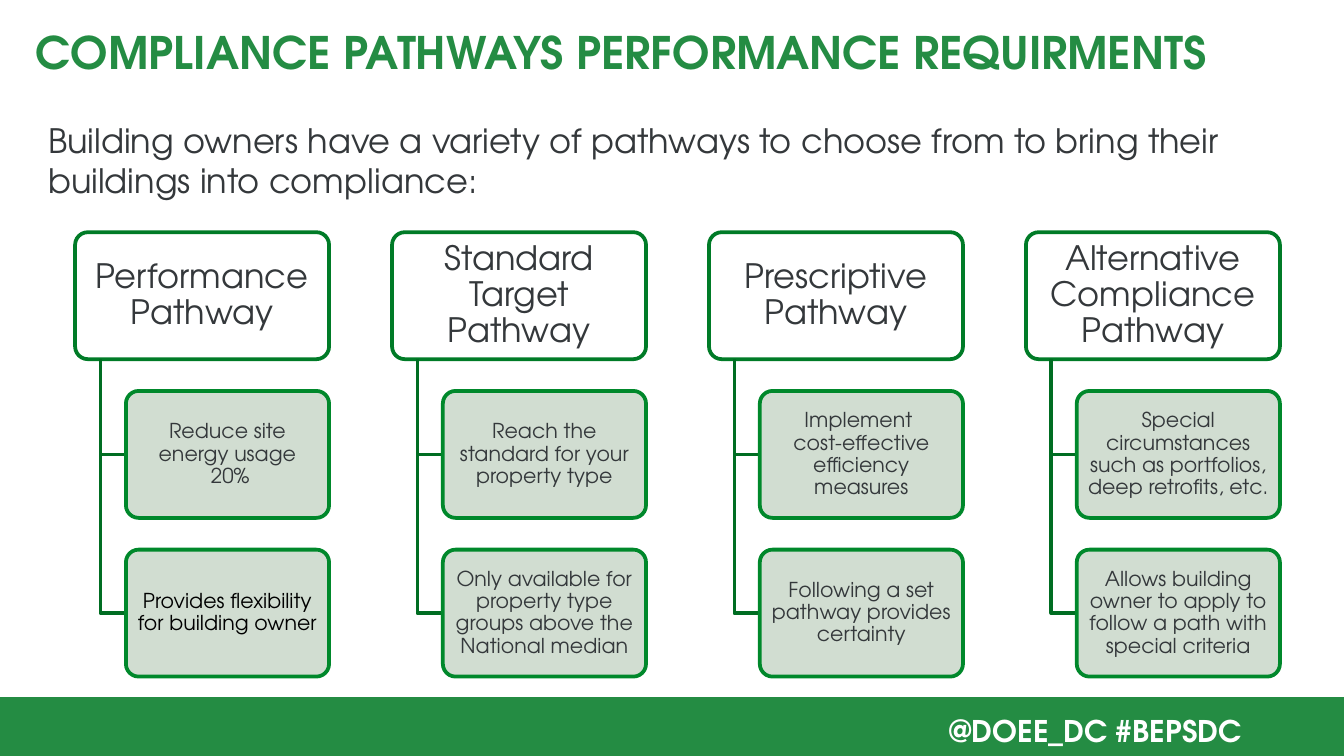
from pptx import Presentation
from pptx import util as u
from pptx.dml.color import RGBColor
from pptx.enum import shapes, text
from pptx.oxml.ns import qn
from lxml import etree

Cm = u.Cm
INK, GREEN, WHITE = "34383B", "248C43", "FFFFFF"
LEFT, TOP = 1.42, 4.39
COL, ROW = 5.99, 3
WIDE, HIGH = 4.8, 2.4
STEM, INDENT = 0.48, 0.96

PATHS = [
    ("Performance Pathway",
     ["Reduce site energy usage\n 20%",
      "Provides flexibility for building owner"]),
    ("Standard Target Pathway",
     ["Reach the standard for your property type",
      "Only available for property type groups above the National median"]),
    ("Prescriptive Pathway",
     ["Implement \ncost-effective efficiency measures",
      "Following a set pathway provides certainty"]),
    ("Alternative Compliance Pathway",
     ["Special circumstances such as portfolios, deep retrofits, etc.",
      "Allows building owner to apply to follow a path with special criteria"]),
]


def color(code):
    return RGBColor.from_string(code)


class Deck:
    font = "TeX Gyre Adventor"

    def __init__(self):
        self.show = Presentation()
        self.show.slide_width, self.show.slide_height = Cm(25.4), Cm(14.29)
        self.slide = self.show.slides.add_slide(self.show.slide_layouts[6])

    def put(self, shape, words, size, ink, bold=False, align="LEFT",
            anchor="TOP", inset=(0.25, 0.13), space=None):
        """Fill a shape with one paragraph; a newline becomes a line break."""
        frame = shape.text_frame
        frame.word_wrap = True
        frame.vertical_anchor = text.MSO_ANCHOR[anchor]
        frame.margin_left = frame.margin_right = Cm(inset[0])
        frame.margin_top = frame.margin_bottom = Cm(inset[1])
        para = frame.paragraphs[0]
        para.alignment = text.PP_ALIGN[align]
        if space:
            para.line_spacing = space
        for i, line in enumerate(words.split("\n")):
            if i:
                para.add_line_break()
            run = para.add_run()
            run.text = line
            run.font.name, run.font.size = self.font, u.Pt(size)
            run.font.bold = bold
            run.font.color.rgb = color(ink)

    def label(self, x, y, w, h, words, size, ink, **style):
        box = self.slide.shapes.add_textbox(Cm(x), Cm(y), Cm(w), Cm(h))
        self.put(box, words, size, ink, **style)

    def block(self, kind, x, y, w, h, fill, line=None, alpha=None):
        shape = self.slide.shapes.add_shape(kind, Cm(x), Cm(y), Cm(w), Cm(h))
        shape.shadow.inherit = False
        shape.fill.solid()
        shape.fill.fore_color.rgb = color(fill)
        if alpha:
            tint = shape.element.spPr.find(qn("a:solidFill"))[0]
            etree.SubElement(tint, qn("a:alpha"), val=str(alpha * 1000))
        if line:
            shape.line.color.rgb = color(line)
            shape.line.width = u.Pt(2)
        else:
            shape.line.fill.background()
        return shape

    def card(self, x, y, w, words, size, ink, fill, line, inset, alpha=None):
        kind = shapes.MSO_SHAPE.ROUNDED_RECTANGLE
        shape = self.block(kind, x, y, w, HIGH, fill, line, alpha)
        shape.adjustments[0] = 0.1
        self.put(shape, words, size, ink, align="CENTER", anchor="MIDDLE",
                 inset=inset, space=0.9)

    def elbow(self, x, y, w, h):
        """Draw a line down from x, y and then right."""
        pen = self.slide.shapes.build_freeform(Cm(x), Cm(y))
        pen.add_line_segments([(Cm(x), Cm(y + h)), (Cm(x + w), Cm(y + h))],
                              close=False)
        shape = pen.convert_to_shape()
        shape.shadow.inherit = False
        shape.fill.background()
        shape.line.color.rgb = color("006D22")
        shape.line.width = u.Pt(2)


def main():
    deck = Deck()
    deck.label(0.86, 2.29, 23.9, 1.47,
               "Building owners have a variety of pathways to choose from "
               "to bring their buildings into compliance:",
               18, INK, anchor="MIDDLE", inset=(0.05, 0.05))
    deck.label(0.43, 0.33, 23.57, 1.27,
               "COMPLIANCE PATHWAYS PERFORMANCE REQUIRMENTS",
               24, GREEN, bold=True)
    deck.block(shapes.MSO_SHAPE.RECTANGLE, 0, 13.18, 25.4, 1.14, GREEN)
    deck.label(16.51, 13.34, 7.21, 0.94, "@DOEE_DC #BEPSDC",
               16, WHITE, bold=True, align="RIGHT")

    for col, (head, notes) in enumerate(PATHS):
        x = LEFT + col * COL
        deck.card(x, TOP, WIDE, head, 18, INK, WHITE, "007B27", (0.1, 0.07))
        for row, note in enumerate(notes, 1):
            y = TOP + row * ROW
            foot = TOP + HIGH
            deck.elbow(x + STEM, foot, INDENT - STEM, y + HIGH / 2 - foot)
            ink = "000000" if (col, row) == (0, 2) else INK
            deck.card(x + INDENT, y, WIDE - INDENT, note, 11, ink,
                      "CCDACD", "00882B", (0.05, 0.05), 90)

    deck.show.save("out.pptx")


if __name__ == "__main__":
    main()
